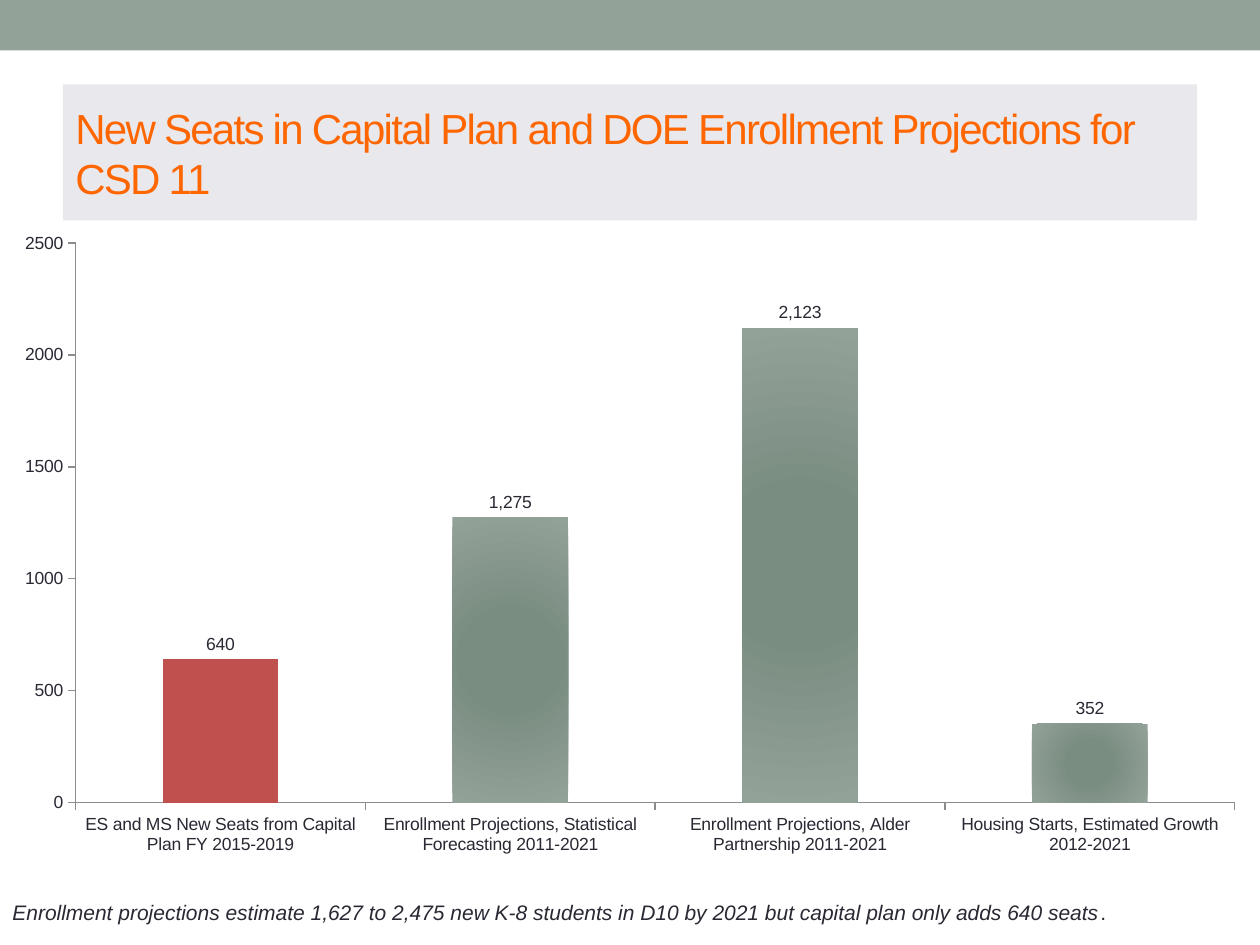
from lxml import etree
from pptx import Presentation
from pptx.chart.data import CategoryChartData
from pptx.dml.color import RGBColor
from pptx.enum.chart import XL_CHART_TYPE, XL_LABEL_POSITION, XL_TICK_MARK
from pptx.enum.shapes import MSO_SHAPE
from pptx.enum.text import MSO_ANCHOR, PP_ALIGN
from pptx.oxml import parse_xml
from pptx.oxml.ns import nsdecls, qn
from pptx.util import Inches, Pt

COLORS = {
    "sage": "93A299", "sage_dark": "7A8D81", "panel": "E8E8ED",
    "orange": "FF6600", "ink": "292934", "red": "C0504D", "axis": "8C8C8C",
}
FONT = "Arial"
SEATS = {
    "ES and MS New Seats from Capital Plan FY 2015-2019": 640,
    "Enrollment Projections, Statistical Forecasting 2011-2021": 1275,
    "Enrollment Projections, Alder Partnership 2011-2021": 2123,
    "Housing Starts, Estimated Growth 2012-2021": 352,
}


def color(name):
    return RGBColor.from_string(COLORS[name])


def set_values(target, values):
    for name, value in values.items():
        setattr(target, name, value)


def style_font(font, size, color_name, **values):
    set_values(font, {"name": FONT, "size": Pt(size), **values})
    font.color.rgb = color(color_name)


def add_panel(slide, box, color_name):
    shape = slide.shapes.add_shape(MSO_SHAPE.RECTANGLE, *map(Inches, box))
    shape.shadow.inherit = False
    shape.fill.solid()
    shape.fill.fore_color.rgb = color(color_name)
    shape.line.fill.background()
    return shape


def add_title(slide, box):
    frame = add_panel(slide, box, "panel").text_frame
    set_values(frame, {"word_wrap": True, "vertical_anchor": MSO_ANCHOR.MIDDLE})
    paragraph = frame.paragraphs[0]
    paragraph.alignment = PP_ALIGN.LEFT
    run = paragraph.add_run()
    run.text = "New Seats in Capital Plan and DOE Enrollment Projections for CSD 11"
    style_font(run.font, 24, "orange")
    run.font._element.set("spc", "-100")


def add_footnote(slide, box):
    frame = slide.shapes.add_textbox(*map(Inches, box)).text_frame
    frame.word_wrap = False
    sentence = ("Enrollment projections estimate 1,627 to 2,475 new K-8 students "
                "in D10 by 2021 but capital plan only adds 640 seats")
    for text, italic in ((sentence, True), (".", False)):
        run = frame.paragraphs[0].add_run()
        run.text = text
        style_font(run.font, 12, "ink", italic=italic)


def fill_radial(series, inner, outer):
    """Fill the bars with a circular gradient, darkest in the middle."""
    properties = series.format.fill._xPr
    properties.insert(0, parse_xml(
        f'<a:gradFill {nsdecls("a")} rotWithShape="1"><a:gsLst>'
        f'<a:gs pos="0"><a:srgbClr val="{COLORS[inner]}"/></a:gs>'
        f'<a:gs pos="30000"><a:srgbClr val="{COLORS[inner]}"/></a:gs>'
        f'<a:gs pos="100000"><a:srgbClr val="{COLORS[outer]}"/></a:gs></a:gsLst>'
        '<a:path path="circle"><a:fillToRect l="50000" t="50000" r="50000" b="50000"/>'
        '</a:path></a:gradFill>'))


def place_plot(chart, x, y, w, h):
    """Fix the inner plot area, in fractions of the chart's box."""
    plot_area = chart._chartSpace.chart.plotArea
    for old in plot_area.findall(qn("c:layout")):
        plot_area.remove(old)
    layout = etree.Element(qn("c:layout"))
    manual = etree.SubElement(layout, qn("c:manualLayout"))
    settings = {"layoutTarget": "inner", "xMode": "edge", "yMode": "edge",
                "x": x, "y": y, "w": w, "h": h}
    for name, value in settings.items():
        etree.SubElement(manual, qn(f"c:{name}")).set("val", str(value))
    plot_area.insert(0, layout)


def add_seat_chart(slide, box):
    data = CategoryChartData()
    data.categories = list(SEATS)
    data.add_series("Series 1", list(SEATS.values()))
    chart = slide.shapes.add_chart(
        XL_CHART_TYPE.COLUMN_CLUSTERED, *map(Inches, box), data).chart
    set_values(chart, {"has_legend": False, "has_title": False})
    style_font(chart.font, 10, "ink")
    place_plot(chart, 0.06, 0.035, 0.92, 0.864)

    # Axes
    for axis in (chart.category_axis, chart.value_axis):
        set_values(axis, {"has_major_gridlines": False,
                          "major_tick_mark": XL_TICK_MARK.OUTSIDE,
                          "minor_tick_mark": XL_TICK_MARK.NONE})
        axis.format.line.color.rgb = color("axis")
        axis.format.line.width = Pt(0.75)
    set_values(chart.value_axis,
               {"minimum_scale": 0, "maximum_scale": 2500, "major_unit": 500})
    set_values(chart.value_axis.tick_labels,
               {"number_format": "0", "number_format_is_linked": False})

    # Bars and their values
    plot = chart.plots[0]
    set_values(plot, {"gap_width": 150, "vary_by_categories": False,
                      "has_data_labels": True})
    set_values(plot.data_labels, {
        "show_value": True, "number_format": "#,##0",
        "number_format_is_linked": False,
        "position": XL_LABEL_POSITION.OUTSIDE_END})
    style_font(plot.data_labels.font, 10, "ink")
    series = plot.series[0]
    series.invert_if_negative = False
    fill_radial(series, "sage_dark", "sage")
    capital_plan_fill = series.points[0].format.fill
    capital_plan_fill.solid()
    capital_plan_fill.fore_color.rgb = color("red")


def main():
    presentation = Presentation()
    set_values(presentation, {"slide_width": Inches(10), "slide_height": Inches(7.5)})
    slide = presentation.slides.add_slide(presentation.slide_layouts[6])
    add_panel(slide, (0, 0, 10, 0.4), "sage")
    add_title(slide, (0.5, 0.67, 9, 1.08))
    add_footnote(slide, (0, 7.09, 8.98, 0.3))
    add_seat_chart(slide, (0, 1.75, 10, 5.14))
    presentation.save("out.pptx")


if __name__ == "__main__":
    main()
